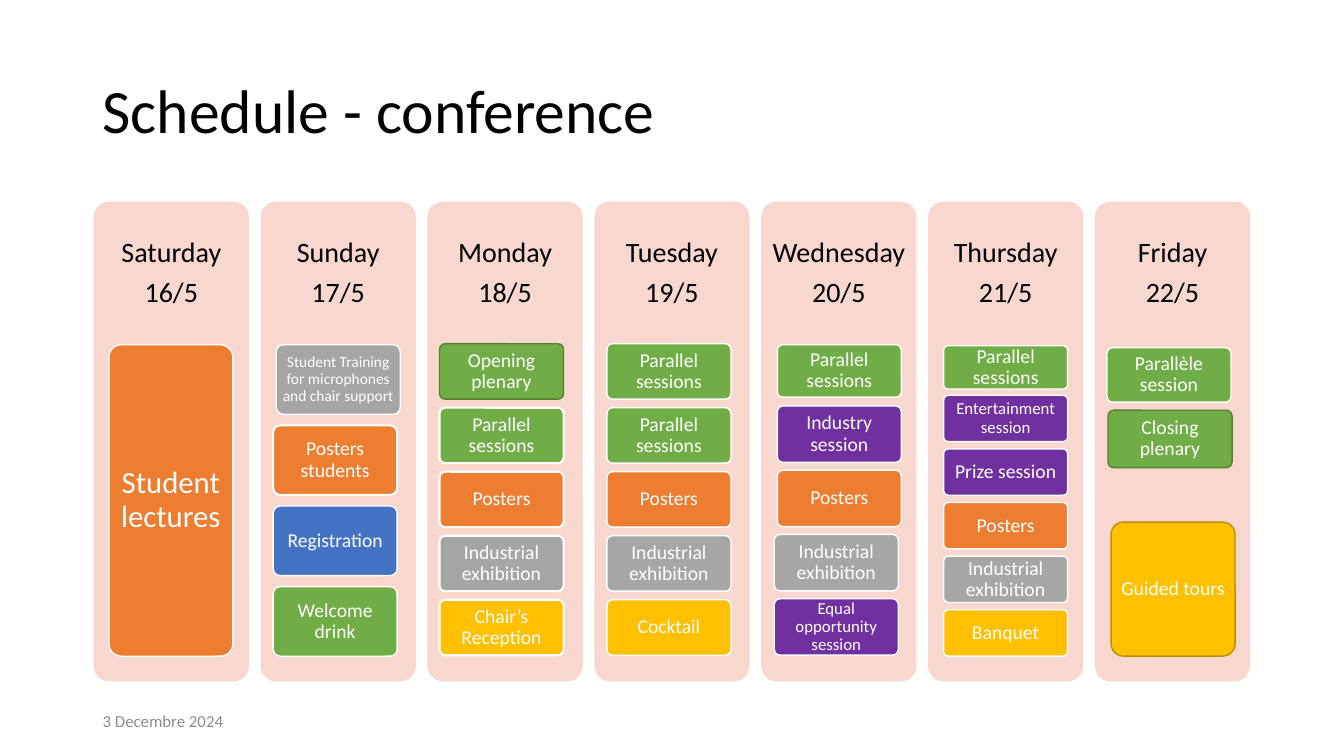
"""Build the conference schedule slide: seven day columns filled with session cards."""
import pptx
import pptx.dml.color
import pptx.enum.shapes
import pptx.enum.text
import pptx.util

Inches = pptx.util.Inches
RGB = pptx.dml.color.RGBColor.from_string
ALIGN = pptx.enum.text.PP_ALIGN
MIDDLE = pptx.enum.text.MSO_ANCHOR.MIDDLE
ROUND = pptx.enum.shapes.MSO_SHAPE.ROUNDED_RECTANGLE

COLORS = {
    "black": "000000", "white": "FFFFFF", "muted": "8C8C8C", "panel": "F8D7CE",
    "orange": "ED7D31", "gray": "A5A5A5", "silver": "A6A6A6", "blue": "4472C4",
    "green": "70AD47", "gold": "FFC000", "purple": "7030A0",
    "moss": "538035", "bronze": "BD8E00",
}

# Each day: name, date, card left, first top, last top, card height, cards.
# Each card: text, fill, and whatever differs from the day's rule.
DAYS = [
    ("Saturday", "16/5", 1.08, 3.42, 3.42, 3.09, [
        ("Student lectures", "orange", {"size": 22, "pad": (0.06, 0.05)}),
    ]),
    ("Sunday", "17/5", 2.71, 3.42, 5.82, 0.69, [
        ("Student Training for microphones and chair support", "gray",
         {"left": 2.74, "size": 11, "pad": (0.03, 0.02)}),
        ("Posters students", "orange", {"weight": 1.5}),
        ("Registration", "blue", {}),
        ("Welcome drink", "green", {}),
    ]),
    ("Monday", "18/5", 4.36, 3.41, 5.95, 0.55, [
        ("Opening plenary", "green", {"edge": "moss"}),
        ("Parallel sessions", "green", {"weight": 1.5}),
        ("Posters", "orange", {"weight": 1.5}),
        ("Industrial exhibition", "gray", {"weight": 1.5}),
        ("Chair’s Reception", "gold", {"weight": 1.5}),
    ]),
    ("Tuesday", "19/5", 6.02, 3.41, 5.95, 0.55, [
        ("Parallel sessions", "green", {}),
        ("Parallel sessions", "green", {}),
        ("Posters", "orange", {}),
        ("Industrial exhibition", "silver", {}),
        ("Cocktail", "gold", {}),
    ]),
    ("Wednesday", "20/5", 7.71, 3.39, 5.94, 0.56, [
        ("Parallel sessions", "green", {"top": 3.42, "high": 0.52}),
        ("Industry session", "purple", {}),
        ("Posters", "orange", {}),
        ("Industrial exhibition", "silver", {"left": 7.68}),
        ("Equal opportunity session", "purple",
         {"left": 7.68, "size": 12, "pad": (0.03, 0.03)}),
    ]),
    ("Thursday", "21/5", 9.36, 3.39, 6.05, 0.46, [
        ("Parallel sessions", "green", {"top": 3.43, "high": 0.43}),
        ("Entertainment session", "purple", {"size": 12, "pad": (0.03, 0.03)}),
        ("Prize session", "purple", {}),
        ("Posters", "orange", {}),
        ("Industrial exhibition", "silver", {}),
        ("Banquet", "gold", {}),
    ]),
    ("Friday", "22/5", 10.98, 3.45, 5.18, 0.54, [
        ("Parallèle session", "green", {}),
        ("Closing plenary", "green",
         {"left": 10.99, "top": 4.07, "high": 0.57, "edge": "moss"}),
        ("Guided tours", "gold", {"left": 11.02, "high": 1.33, "edge": "bronze"}),
    ]),
]


def block(left, top, wide, high, fill):
    """Add a rounded rectangle without a line."""
    shape = slide.shapes.add_shape(
        ROUND, Inches(left), Inches(top), Inches(wide), Inches(high))
    shape.adjustments[0] = 0.1
    shape.shadow.inherit = False
    shape.fill.solid()
    shape.fill.fore_color.rgb = RGB(COLORS[fill])
    shape.line.fill.background()
    return shape


def write(shape, lines, size, color, align=ALIGN.CENTER, pad=(0.1, 0.05), gap=0, lead=0.9):
    """Set the lines of text in a shape, centred vertically."""
    frame = shape.text_frame
    across, down = map(Inches, pad)
    look = {"word_wrap": True, "vertical_anchor": MIDDLE,
            "margin_left": across, "margin_right": across,
            "margin_top": down, "margin_bottom": down}
    for name, value in look.items():
        setattr(frame, name, value)
    frame.text = "\n".join(lines)
    for para in frame.paragraphs:
        style = {"alignment": align, "line_spacing": lead, "space_after": pptx.util.Pt(gap)}
        for name, value in style.items():
            setattr(para, name, value)
        font = para.runs[0].font
        font.name = "Calibri"
        font.size = pptx.util.Pt(size)
        font.color.rgb = RGB(COLORS[color])


deck = pptx.Presentation()
deck.slide_width = Inches(13.33)
deck.slide_height = Inches(7.5)
slide = deck.slides.add_slide(deck.slide_layouts[6])

title = slide.shapes.add_textbox(Inches(0.92), Inches(0.4), Inches(11.5), Inches(1.45))
write(title, ["Schedule - conference"], 44, "black", ALIGN.LEFT)

pitch = (10.86 - 0.93) / (len(DAYS) - 1)
for col, (day, date, left, first, last, high, cards) in enumerate(DAYS):
    edge = 0.93 + col * pitch
    block(edge, 2, 1.54, 4.76, "panel")
    head = slide.shapes.add_textbox(Inches(edge), Inches(2), Inches(1.54), Inches(1.43))
    write(head, [day, date], 20, "black", pad=(0.08, 0.08), gap=7)

    step = (last - first) / max(len(cards) - 1, 1)
    for row, (text, fill, extra) in enumerate(cards):
        rule = {"left": left, "top": first + row * step, "high": high, "edge": "white",
                "weight": 1, "size": 14, "pad": (0.04, 0.03)} | extra
        card = block(rule["left"], rule["top"], 1.23, rule["high"], fill)
        card.line.color.rgb = RGB(COLORS[rule["edge"]])
        card.line.width = pptx.util.Pt(rule["weight"])
        write(card, [text], rule["size"], "white", pad=rule["pad"])

foot = slide.shapes.add_textbox(Inches(0.92), Inches(6.95), Inches(3), Inches(0.4))
write(foot, ["3 Decembre 2024"], 12, "muted", ALIGN.LEFT, lead=1.0)

deck.save("out.pptx")
